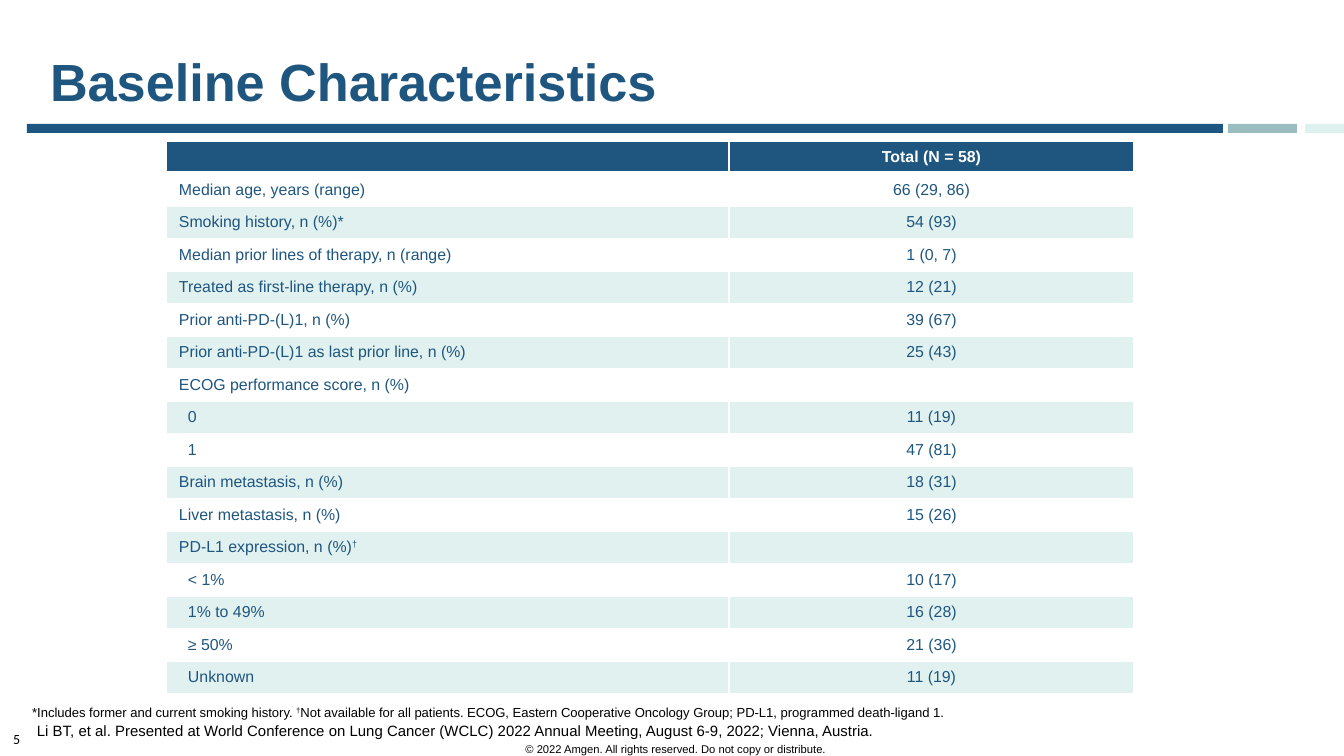
"""Build the baseline characteristics slide."""
import lxml.etree
import pptx
import pptx.dml.color
import pptx.enum.shapes
import pptx.enum.text
import pptx.oxml.ns
import pptx.util

RGBColor = pptx.dml.color.RGBColor
Align = pptx.enum.text.PP_ALIGN
Anchor = pptx.enum.text.MSO_ANCHOR
AutoSize = pptx.enum.text.MSO_AUTO_SIZE
qn = pptx.oxml.ns.qn

NAVY = RGBColor(0x1E, 0x56, 0x80)
BAR_NAVY = RGBColor(0x1D, 0x56, 0x80)
TEAL = RGBColor(0x37, 0x7D, 0x83)
MINT = RGBColor(0x7B, 0xCB, 0xBA)
BAND = RGBColor(0xE1, 0xF1, 0xEF)
WHITE = RGBColor(0xFF, 0xFF, 0xFF)
BLACK = RGBColor(0, 0, 0)

EMU_PER_PX = 914400 / 134.4
DAGGER = "†"
INDENT = 9

ROWS = [
    ("", "Total (N = 58)", 0),
    ("Median age, years (range)", "66 (29, 86)", 0),
    ("Smoking history, n (%)*", "54 (93)", 0),
    ("Median prior lines of therapy, n (range)", "1 (0, 7)", 0),
    ("Treated as first-line therapy, n (%)", "12 (21)", 0),
    ("Prior anti-PD-(L)1, n (%)", "39 (67)", 0),
    ("Prior anti-PD-(L)1 as last prior line, n (%)", "25 (43)", 0),
    ("ECOG performance score, n (%)", "", 0),
    ("0", "11 (19)", 1),
    ("1", "47 (81)", 1),
    ("Brain metastasis, n (%)", "18 (31)", 0),
    ("Liver metastasis, n (%)", "15 (26)", 0),
    ("PD-L1 expression, n (%)†", "", 0),
    ("< 1%", "10 (17)", 1),
    ("1% to 49%", "16 (28)", 1),
    ("≥ 50%", "21 (36)", 1),
    ("Unknown", "11 (19)", 1),
]


def px(length):
    return pptx.util.Emu(round(length * EMU_PER_PX))


class SlideBuilder:
    """Hold the text style and the current slide."""

    def __init__(self, slide, font="Arial"):
        self.slide = slide
        self.font = font

    def fill_paragraph(self, paragraph, text, size, color, bold=False, font=None):
        before, dagger, after = text.partition(DAGGER)
        paragraph.text = before
        for part in filter(None, (dagger, after)):
            paragraph.add_run().text = part
        for run in paragraph.runs:
            run.font.name = font or self.font
            run.font.size = pptx.util.Pt(size)
            run.font.bold = bold
            run.font.color.rgb = color
            if run.text == DAGGER:
                run._r.get_or_add_rPr().set("baseline", "30000")
        if not text:
            ending = lxml.etree.SubElement(paragraph._p, qn("a:endParaRPr"))
            ending.set("sz", str(int(size * 100)))

    def title(self, text, left, top, width, height):
        shape = self.slide.shapes.title
        shape.left, shape.top, shape.width, shape.height = map(px, (left, top, width, height))
        frame = shape.text_frame
        frame.auto_size = AutoSize.NONE
        frame.vertical_anchor = Anchor.TOP
        frame.margin_left = frame.margin_right = 0
        frame.margin_top = px(11)
        paragraph = frame.paragraphs[0]
        paragraph.alignment = Align.LEFT
        self.fill_paragraph(paragraph, text, 28, NAVY, bold=True)

    def text(self, text, left, top, width, height, size, font=None,
             align=Align.LEFT, spacing=1.0, after=0, inset=None):
        shape = self.slide.shapes.add_textbox(*map(px, (left, top, width, height)))
        frame = shape.text_frame
        frame.word_wrap = True
        frame.auto_size = AutoSize.SHAPE_TO_FIT_TEXT
        if inset is not None:
            frame.margin_left = frame.margin_right = px(inset)
            frame.margin_top = frame.margin_bottom = px(inset)
        paragraph = frame.paragraphs[0]
        paragraph.alignment = align
        paragraph.line_spacing = spacing
        paragraph.space_after = pptx.util.Pt(after)
        self.fill_paragraph(paragraph, text, size, BLACK, font=font)

    def bar(self, left, width, color, opacity=100):
        shape = self.slide.shapes.add_shape(
            pptx.enum.shapes.MSO_SHAPE.RECTANGLE, *map(px, (left, 124, width, 9)))
        shape.shadow.inherit = False
        shape.line.fill.background()
        shape.fill.solid()
        shape.fill.fore_color.rgb = color
        if opacity < 100:
            fill_color = shape._element.spPr.find(".//" + qn("a:srgbClr"))
            lxml.etree.SubElement(fill_color, qn("a:alpha")).set("val", str(opacity * 1000))

    def border(self, cell, bottom):
        properties = cell._tc.get_or_add_tcPr()
        for side, width in (("L", 1), ("R", 1), ("T", 1), ("B", bottom)):
            line = lxml.etree.SubElement(properties, qn("a:ln" + side))
            line.set("w", str(int(pptx.util.Pt(width))))
            fill = lxml.etree.SubElement(line, qn("a:solidFill"))
            lxml.etree.SubElement(fill, qn("a:srgbClr")).set("val", str(WHITE))

    def cell(self, cell, text, header, fill, align, indent):
        cell.vertical_anchor = Anchor.MIDDLE
        cell.margin_left = px(13 + indent)
        cell.margin_right = px(13)
        cell.margin_top = cell.margin_bottom = px(5)
        self.border(cell, 3 if header else 1)
        if fill is None:
            cell.fill.background()
        else:
            cell.fill.solid()
            cell.fill.fore_color.rgb = fill
        paragraph = cell.text_frame.paragraphs[0]
        paragraph.alignment = align
        self.fill_paragraph(paragraph, text, 8.5, WHITE if header else NAVY, bold=header)

    def table(self, rows, left, top, widths, height):
        frame = self.slide.shapes.add_table(
            len(rows), len(widths), *map(px, (left, top, sum(widths), height)))
        table = frame.table
        for column, width in zip(table.columns, widths):
            column.width = px(width)
        for index, (label, value, level) in enumerate(rows):
            table.rows[index].height = px(height / len(rows))
            header = index == 0
            fill = NAVY if header else BAND if index % 2 == 0 else None
            self.cell(table.cell(index, 0), label, header, fill, Align.LEFT, level * INDENT)
            self.cell(table.cell(index, 1), value, header, fill, Align.CENTER, 0)


def main():
    presentation = pptx.Presentation()
    presentation.slide_width = px(1344)
    presentation.slide_height = px(756)
    builder = SlideBuilder(presentation.slides.add_slide(presentation.slide_layouts[5]))
    builder.text("5", 0, 724, 67, 31, 7.5, font="Calibri")
    builder.bar(27, 1196, BAR_NAVY)
    builder.bar(1228, 69, TEAL, opacity=50)
    builder.bar(1305, 39, MINT, opacity=25)
    builder.text("© 2022 Amgen. All rights reserved. Do not copy or distribute.",
                 301, 737, 749, 26, 6, align=Align.CENTER, spacing=0.9)
    builder.title("Baseline Characteristics", 50, 38, 1258, 169)
    builder.text("*Includes former and current smoking history. †Not available for all patients. "
                 "ECOG, Eastern Cooperative Oncology Group; PD-L1, programmed death-ligand 1.",
                 19, 698, 1344, 30, 7, after=6)
    builder.table(ROWS, 166, 141, (563, 405), 553)
    builder.text("Li BT, et al. Presented at World Conference on Lung Cancer (WCLC) 2022 "
                 "Annual Meeting, August 6-9, 2022; Vienna, Austria.",
                 28, 716, 890, 62, 8, spacing=0.9, after=3, inset=9)
    presentation.save("out.pptx")


if __name__ == "__main__":
    main()
